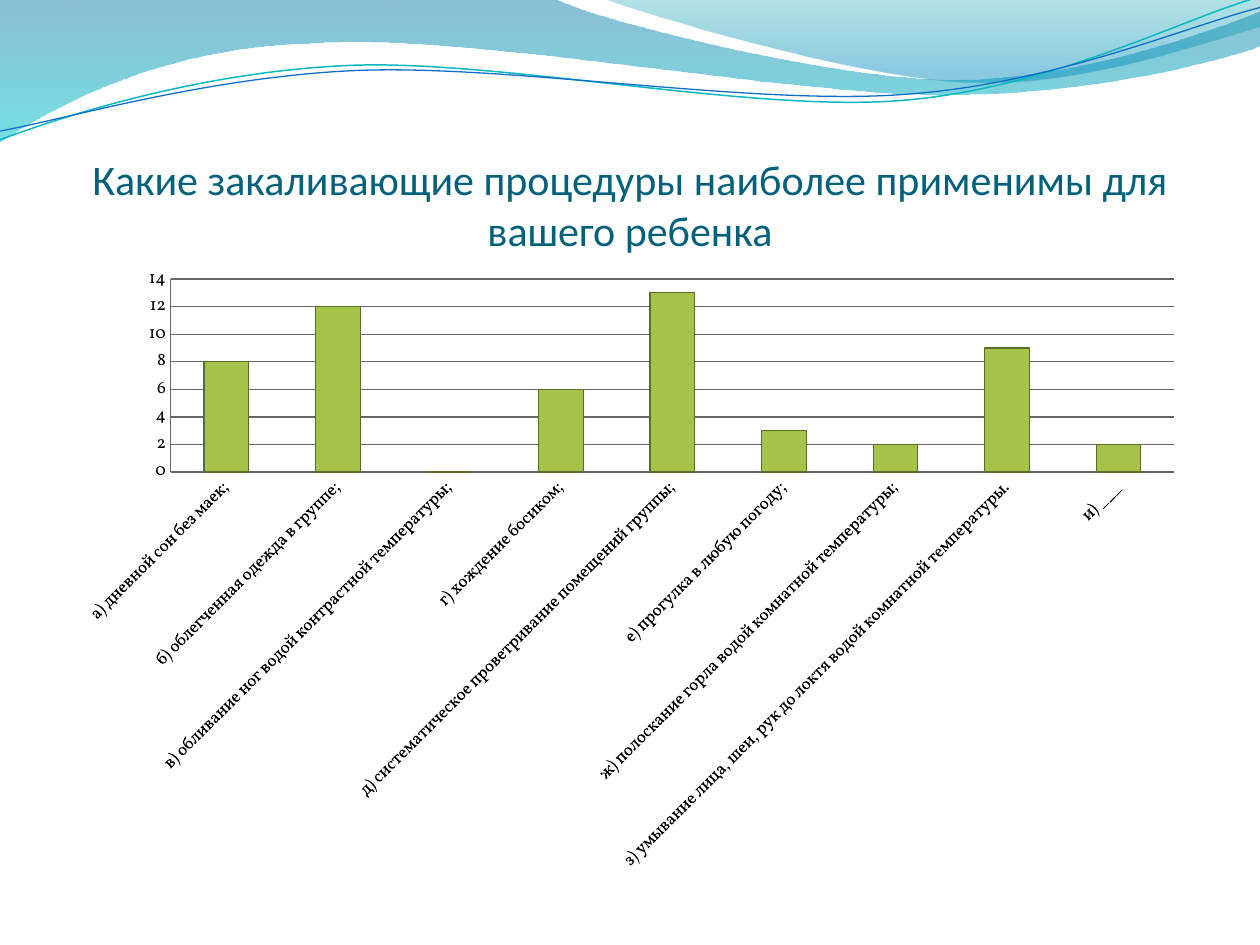
from lxml import etree
from pptx import Presentation
from pptx.chart.data import CategoryChartData
from pptx.dml.color import RGBColor
from pptx.enum.chart import XL_CHART_TYPE, XL_TICK_MARK
from pptx.enum.text import MSO_ANCHOR, MSO_AUTO_SIZE, PP_ALIGN
from pptx.oxml.ns import qn
from pptx.util import Pt

COLUMNS = XL_CHART_TYPE.COLUMN_CLUSTERED
NO_TICK = XL_TICK_MARK.NONE
BOTTOM = MSO_ANCHOR.BOTTOM
FIXED_SIZE = MSO_AUTO_SIZE.NONE
CENTER = PP_ALIGN.CENTER
EMU_PER_PX = 9144

BACK_WAVE = [
    (0, 0), (440, -1), (476, 17, 664, 63, 758, 63),
    (853, 63, 958, 26, 1000, 9), (1001, 36),
    (983, 44, 870, 76, 746, 75), (622, 75, 382, 28, 257, 34),
    (129, 36, 46, 83, -1, 113),
]
FRONT_WAVE = [
    (479, -1), (509, 11, 682, 62, 769, 65),
    (856, 69, 961, 32, 1000, 21), (1000, 0),
]
TEAL_CURVE = [
    (0, 111), (48, 93, 158, 57, 277, 52),
    (395, 47, 593, 89, 713, 80), (833, 71, 938, 15, 998, -2),
]
BLUE_CURVE = [
    (0, 104), (47, 96, 164, 61, 283, 56),
    (403, 51, 597, 84, 717, 75), (836, 67, 941, 21, 1000, 6),
]
ANSWERS = {
    "а) дневной сон без маек;": 8,
    "б) облегченная одежда в группе;": 12,
    "в) обливание ног водой контрастной температуры;": 0,
    "г) хождение босиком;": 6,
    "д) систематическое проветривание помещений группы;": 13,
    "е) прогулка в любую погоду;": 3,
    "ж) полоскание горла водой комнатной температуры;": 2,
    "з) умывание лица, шеи, рук до локтя водой комнатной температуры.": 9,
    "и) ___": 2,
}


def px(value):
    return value * EMU_PER_PX


def color(value):
    return RGBColor.from_string(value)


def apply(target, values):
    for name, value in values.items():
        setattr(target, name, value)


class SlideBuilder:
    title_font = {"name": "Calibri", "size": Pt(24), "bold": False}
    chart_font = {"name": "Vollkorn", "size": Pt(10), "bold": False}
    title_color = "04617B"
    chart_text_color = "000000"
    grid_color = "666666"
    bar_color = "A5C249"
    bar_border = "5B6B28"

    def __init__(self, slide):
        self.slide = slide

    def outline(self, path, close):
        start, *segments = path
        points = [point for segment in segments
                  for point in zip(segment[::2], segment[1::2])]
        builder = self.slide.shapes.build_freeform(*start, scale=EMU_PER_PX)
        builder.add_line_segments(points, close=close)
        shape = builder.convert_to_shape()
        shape.shadow.inherit = False
        self.bend(shape, segments)
        return shape

    def bend(self, shape, segments):
        lines = iter(list(shape._element.iter(qn("a:lnTo"))))
        for segment in segments:
            first, *others = [next(lines) for _ in segment[::2]]
            if others:
                first.tag = qn("a:cubicBezTo")
            for line in others:
                first.append(line[0])
                line.getparent().remove(line)

    def wave(self, path, stops):
        shape = self.outline(path, True)
        shape.line.fill.background()
        shape.fill.gradient()
        shape.fill.gradient_angle = 270
        elements = list(shape._element.iter(qn("a:gs")))
        for stop, element, (position, value, opacity) in zip(
            shape.fill.gradient_stops, elements, stops
        ):
            stop.position = position
            stop.color.rgb = color(value)
            alpha = etree.SubElement(element[0], qn("a:alpha"))
            alpha.set("val", str(opacity * 1000))

    def curve(self, path, value, width):
        shape = self.outline(path, False)
        shape.fill.background()
        shape.line.color.rgb = color(value)
        shape.line.width = Pt(width)

    def title(self, text, left, top, width, height):
        shape = self.slide.shapes.title
        self.slide.shapes._spTree.append(shape._element)
        apply(shape, {"left": px(left), "top": px(top),
                      "width": px(width), "height": px(height)})
        frame = shape.text_frame
        frame.text = text
        apply(frame, {"word_wrap": True, "auto_size": FIXED_SIZE,
                      "vertical_anchor": BOTTOM, "margin_left": 0,
                      "margin_right": 0, "margin_top": px(5), "margin_bottom": 0})
        paragraph = frame.paragraphs[0]
        paragraph.alignment = CENTER
        font = paragraph.runs[0].font
        apply(font, self.title_font)
        font.color.rgb = color(self.title_color)

    def column_chart(self, answers, left, top, width, height):
        data = CategoryChartData()
        data.categories = list(answers)
        data.add_series("Series 1", list(answers.values()))
        chart = self.slide.shapes.add_chart(
            COLUMNS, px(left), px(top), px(width), px(height), data
        ).chart
        apply(chart, {"has_legend": False, "has_title": False})
        apply(chart.font, self.chart_font)
        chart.font.color.rgb = color(self.chart_text_color)

        plot = chart.plots[0]
        apply(plot, {"gap_width": 150, "vary_by_categories": False})
        bars = plot.series[0].format
        bars.fill.solid()
        bars.fill.fore_color.rgb = color(self.bar_color)
        bars.line.color.rgb = color(self.bar_border)
        bars.line.width = Pt(0.75)

        categories, values = chart.category_axis, chart.value_axis
        values.has_major_gridlines = True
        for axis in (categories, values):
            apply(axis, {"major_tick_mark": NO_TICK, "minor_tick_mark": NO_TICK})
        for part in (categories, values, values.major_gridlines):
            part.format.line.color.rgb = color(self.grid_color)
            part.format.line.width = Pt(0.75)


def main():
    presentation = Presentation()
    apply(presentation, {"slide_width": px(1000), "slide_height": px(750)})
    slide = presentation.slides.add_slide(presentation.slide_layouts[5])
    builder = SlideBuilder(slide)
    builder.wave(BACK_WAVE, [(0, "0074A1", 45), (1, "00C6CF", 55)])
    builder.wave(FRONT_WAVE, [(0, "00A1A9", 30), (0.8, "008BBF", 45)])
    builder.curve(TEAL_CURVE, "0AB8BF", 0.85)
    builder.curve(BLUE_CURVE, "0F6FC6", 0.75)
    builder.title("Какие закаливающие процедуры наиболее применимы для вашего ребенка",
                  50, 77, 900, 125)
    builder.column_chart(ANSWERS, 50, 212, 900, 480)
    presentation.save("out.pptx")


if __name__ == "__main__":
    main()
